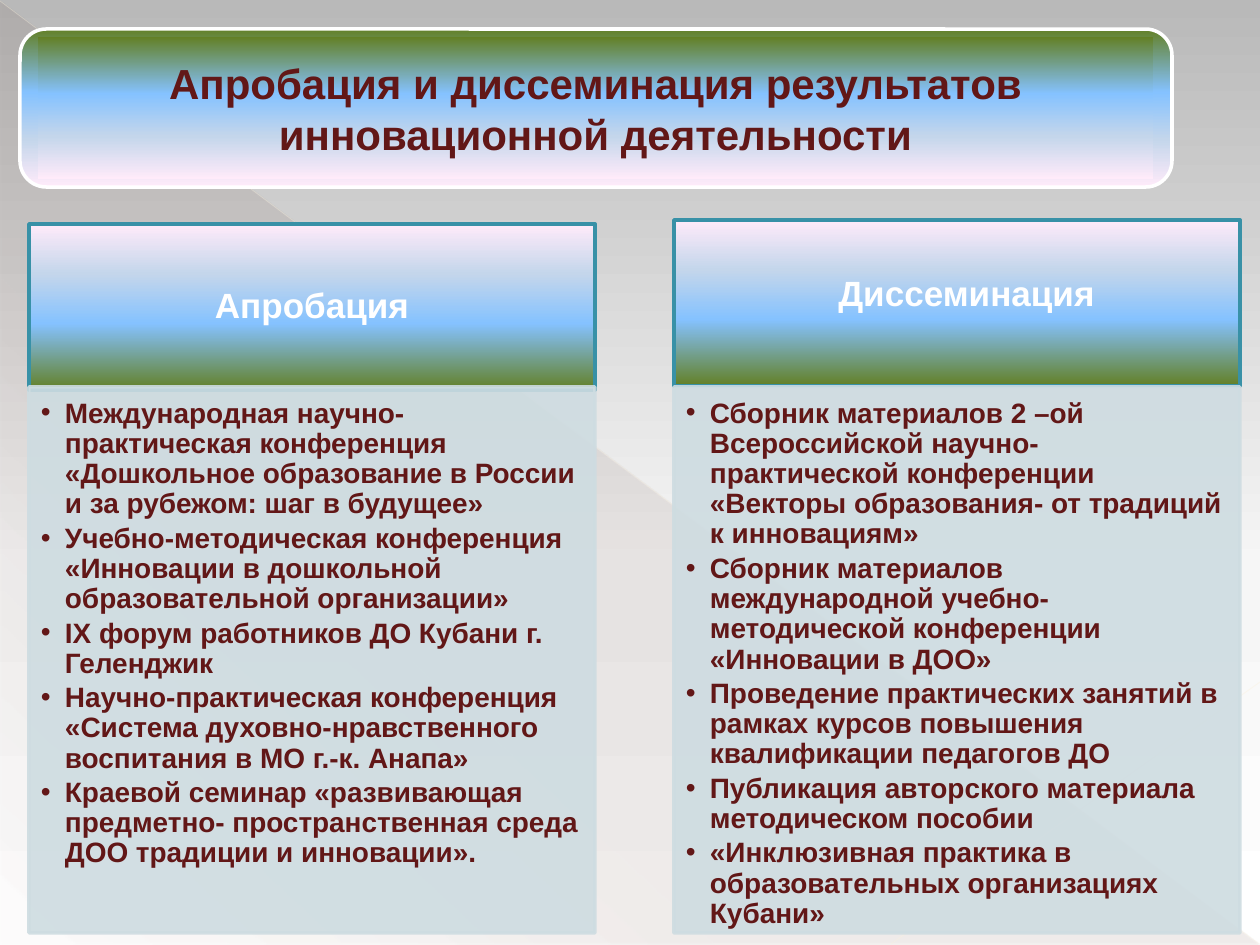
from dataclasses import dataclass

from lxml import etree
from pptx import Presentation
from pptx.dml.color import RGBColor
from pptx.enum.shapes import MSO_CONNECTOR, MSO_SHAPE
from pptx.enum.text import MSO_ANCHOR, PP_ALIGN
from pptx.oxml.ns import qn
from pptx.util import Emu, Pt

RECTANGLE = MSO_SHAPE.RECTANGLE
ROUNDED = MSO_SHAPE.ROUNDED_RECTANGLE
TRIANGLE = MSO_SHAPE.RIGHT_TRIANGLE
STRAIGHT = MSO_CONNECTOR.STRAIGHT
MIDDLE = MSO_ANCHOR.MIDDLE
TOP = MSO_ANCHOR.TOP
CENTER = PP_ALIGN.CENTER
LEFT = PP_ALIGN.LEFT
PX = 914400 / 126


@dataclass(frozen=True)
class Theme:
    font: str = "Arial"
    title_size: int = 24
    header_size: int = 20
    body_size: int = 16
    dark: str = "621717"
    white: str = "FFFFFF"
    border: str = "3891A7"
    panel: str = "CEDCE1"
    panel_alpha: int = 90
    meadow: tuple = ((0, "638026", 100), (40, "85C2FF", 100),
                     (70, "C4D6EB", 100), (100, "FFEBFA", 100))
    backdrop: tuple = ((0, "B9B9B9", 100), (60, "F6F6F6", 100), (100, "FFFFFF", 100))
    shade: tuple = ((0, "4F271C", 10), (70, "4F271C", 8), (100, "4F271C", 1))


def px(value):
    return Emu(round(value * PX))


def set_alpha(color_element, percent):
    if percent < 100:
        etree.SubElement(color_element, qn("a:alpha"), val=str(percent * 1000))


class SlideBuilder:
    def __init__(self, presentation, theme):
        self.theme = theme
        self.slide = presentation.slides.add_slide(presentation.slide_layouts[6])

    def gradient(self, fill, owner, stops, angle):
        fill.gradient()
        gradient = owner.find(".//" + qn("a:gradFill"))
        stop_list = gradient.find(qn("a:gsLst"))
        for stop in list(stop_list):
            stop_list.remove(stop)
        for position, color, alpha in stops:
            stop = etree.SubElement(stop_list, qn("a:gs"), pos=str(position * 1000))
            set_alpha(etree.SubElement(stop, qn("a:srgbClr"), val=color), alpha)
        gradient.find(qn("a:lin")).set("ang", str(angle * 60000))

    def background(self, stops, angle):
        self.gradient(self.slide.background.fill, self.slide._element, stops, angle)

    def outline(self, line, color, width, alpha=100):
        line.color.rgb = RGBColor.from_string(color)
        line.width = Pt(width)
        set_alpha(line._get_or_add_ln().find(".//" + qn("a:srgbClr")), alpha)

    def block(self, kind, box, stops=None, angle=0, border=None):
        shape = self.slide.shapes.add_shape(kind, *map(px, box))
        shape.shadow.inherit = False
        if stops:
            self.gradient(shape.fill, shape._element, stops, angle)
        if border:
            self.outline(shape.line, border, 2)
        else:
            shape.line.fill.background()
        return shape

    def panel(self, box):
        theme = self.theme
        shape = self.block(RECTANGLE, box)
        shape.fill.solid()
        shape.fill.fore_color.rgb = RGBColor.from_string(theme.panel)
        set_alpha(shape._element.spPr.find(".//" + qn("a:srgbClr")), theme.panel_alpha)
        self.outline(shape.line, theme.panel, 2, theme.panel_alpha)
        return shape

    def line(self, start, end, color, width, alpha):
        connector = self.slide.shapes.add_connector(STRAIGHT, *map(px, start + end))
        self.outline(connector.line, color, width, alpha)
        etree.SubElement(connector._element.spPr, qn("a:effectLst"))

    def text(self, shape, paragraphs, size, color, insets, anchor=MIDDLE,
             align=CENTER, spacing=None, after=None, bullet=False):
        frame = shape.text_frame
        frame.word_wrap = True
        frame.vertical_anchor = anchor
        (frame.margin_left, frame.margin_top,
         frame.margin_right, frame.margin_bottom) = map(px, insets)
        for index, content in enumerate(paragraphs):
            paragraph = frame.add_paragraph() if index else frame.paragraphs[0]
            paragraph.alignment = align
            paragraph.line_spacing = spacing
            paragraph.space_after = after
            if bullet:
                self.bullet(paragraph)
            run = paragraph.add_run()
            run.text = content
            run.font.name = self.theme.font
            run.font.size = Pt(size)
            run.font.bold = True
            run.font.color.rgb = RGBColor.from_string(color)

    def bullet(self, paragraph):
        paragraph.level = 1
        properties = paragraph._p.get_or_add_pPr()
        properties.set("marL", str(px(24)))
        properties.set("indent", str(-px(24)))
        etree.SubElement(properties, qn("a:buFont"), typeface=self.theme.font)
        etree.SubElement(properties, qn("a:buChar"), char="•")

    def column(self, left, top, header, insets, spacing, items):
        theme = self.theme
        heading = self.block(RECTANGLE, (left, top, 566, 166), theme.meadow, 270, theme.border)
        self.text(heading, [header], theme.header_size, theme.white, insets, spacing=spacing)
        body = self.panel((left, 387, 566, 546))
        self.text(body, items, theme.body_size, theme.dark, (12, 12, 15, 18), TOP, LEFT,
                  0.9, Pt(2.4), True)

    def title(self, content):
        theme = self.theme
        self.block(ROUNDED, (20, 29, 1152, 158), theme.meadow, 90, theme.white)
        inner = self.block(RECTANGLE, (38, 37, 1115, 142), theme.meadow, 90)
        self.text(inner, [content], theme.title_size, theme.dark, (32, 0, 32, 0))


APPROBATION = [
    "Международная научно-практическая конференция «Дошкольное образование в России и за рубежом: шаг в будущее»",
    "Учебно-методическая конференция «Инновации в дошкольной образовательной организации»",
    "IX форум работников ДО Кубани г. Геленджик",
    "Научно-практическая конференция «Система духовно-нравственного воспитания в МО г.-к. Анапа»",
    "Краевой семинар «развивающая предметно- пространственная среда ДОО традиции и инновации».",
]
DISSEMINATION = [
    "Сборник материалов 2 –ой Всероссийской научно-практической конференции «Векторы образования- от традиций к инновациям»",
    "Сборник материалов международной учебно-методической конференции «Инновации в ДОО»",
    "Проведение практических занятий в рамках курсов повышения квалификации педагогов ДО",
    "Публикация авторского материала методическом пособии",
    "«Инклюзивная практика в образовательных организациях Кубани»",
]


def main():
    presentation = Presentation()
    presentation.slide_width, presentation.slide_height = px(1260), px(945)
    theme = Theme()
    builder = SlideBuilder(presentation, theme)
    builder.background(theme.backdrop, 90)
    builder.block(TRIANGLE, (1, 2, 1258, 942), theme.shade, 133)
    builder.line((0, 1), (1259, 944), "FAF0DC", 0.39, 35)
    builder.line((1260, 682), (891, 944), "FAF2DF", 0.47, 45)
    builder.column(29, 224, "Апробация", (20, 11, 20, 11), 0.9, APPROBATION)
    builder.column(674, 220, "Диссеминация", (24, 5, 5, 5), Pt(12), DISSEMINATION)
    builder.title("Апробация и диссеминация результатов инновационной деятельности")
    presentation.save("out.pptx")


if __name__ == "__main__":
    main()
